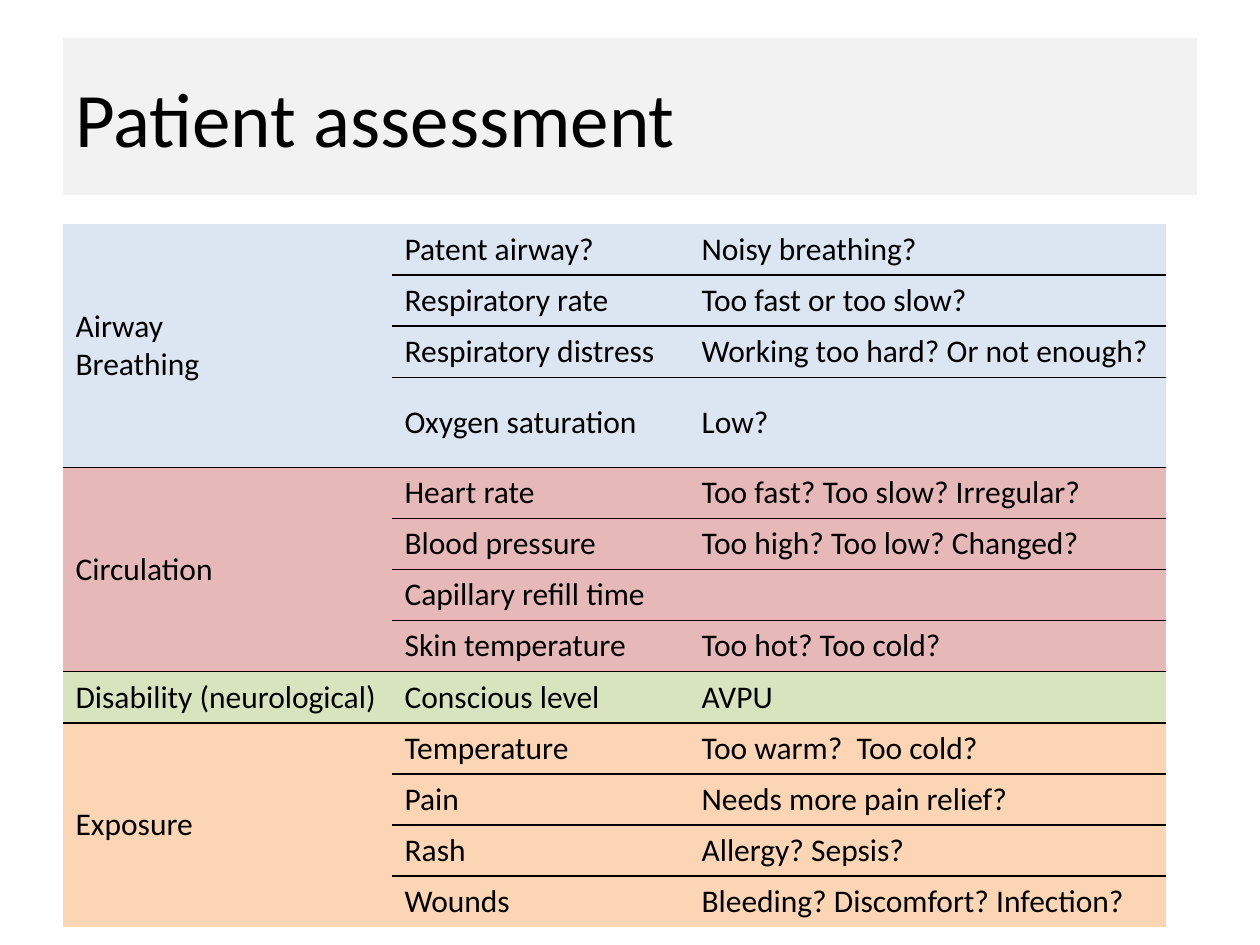
import pptx
import pptx.dml.color
import pptx.enum.shapes
import pptx.enum.text
import pptx.oxml.ns
import pptx.util
from lxml import etree

PX = 914400 / 126
FONT = "Calibri"
BLACK = "000000"
COLUMN_WIDTHS = [329, 297, 477]
ROW_HEIGHT = 51
TALL_ROW = "Oxygen saturation"
TALL_ROW_HEIGHT = 90
GROUPS = [
    (["Airway", "Breathing"], "DCE6F2", [
        ("Patent airway?", "Noisy breathing?"),
        ("Respiratory rate", "Too fast or too slow?"),
        ("Respiratory distress", "Working too hard? Or not enough?"),
        ("Oxygen saturation", "Low?"),
    ]),
    (["Circulation"], "E6B9B8", [
        ("Heart rate", "Too fast? Too slow? Irregular?"),
        ("Blood pressure", "Too high? Too low? Changed?"),
        ("Capillary refill time", ""),
        ("Skin temperature", "Too hot? Too cold?"),
    ]),
    (["Disability (neurological)"], "D7E4BD", [
        ("Conscious level", "AVPU"),
    ]),
    (["Exposure"], "FCD5B5", [
        ("Temperature", "Too warm?  Too cold?"),
        ("Pain", "Needs more pain relief?"),
        ("Rash", "Allergy? Sepsis?"),
        ("Wounds", "Bleeding? Discomfort? Infection?"),
    ]),
]


def px(length):
    """Turn a length in px into EMU."""
    return pptx.util.Emu(round(length * PX))


def color(value):
    """Turn a hex string into a colour."""
    return pptx.dml.color.RGBColor.from_string(value)


def write_lines(frame, lines, size):
    """Write each line as a left-aligned paragraph with one run."""
    for index, line in enumerate(lines):
        para = frame.add_paragraph() if index else frame.paragraphs[0]
        para.alignment = pptx.enum.text.PP_ALIGN.LEFT
        para.font.size = pptx.util.Pt(size)
        if line:
            span = para.add_run()
            span.text = line
            span.font.name = FONT
            span.font.size = pptx.util.Pt(size)
            span.font.color.rgb = color(BLACK)


def set_borders(cell, ruled_sides):
    """Rule the given sides of a cell in black and clear the others."""
    properties = cell._tc.get_or_add_tcPr()
    for side in "LRTB":
        line = etree.SubElement(properties, pptx.oxml.ns.qn(f"a:ln{side}"), w="12700")
        if side in ruled_sides:
            fill = etree.SubElement(line, pptx.oxml.ns.qn("a:solidFill"))
            etree.SubElement(fill, pptx.oxml.ns.qn("a:srgbClr"), val=BLACK)
        else:
            etree.SubElement(line, pptx.oxml.ns.qn("a:noFill"))


def style_cell(cell, fill, ruled_sides):
    """Give a cell its borders, fill and vertical centring."""
    set_borders(cell, ruled_sides)
    cell.fill.solid()
    cell.fill.fore_color.rgb = color(fill)
    cell.vertical_anchor = pptx.enum.text.MSO_ANCHOR.MIDDLE


def add_title(page, left, top, width, height):
    """Place the title band."""
    box = page.shapes.add_shape(
        pptx.enum.shapes.MSO_SHAPE.RECTANGLE, px(left), px(top), px(width), px(height))
    box.shadow.inherit = False
    box.fill.solid()
    box.fill.fore_color.rgb = color("F2F2F2")
    box.line.fill.background()
    box.text_frame.word_wrap = True
    box.text_frame.vertical_anchor = pptx.enum.text.MSO_ANCHOR.MIDDLE
    write_lines(box.text_frame, ["Patient assessment"], 44)


def add_assessment_table(page, left, top):
    """Place the assessment table with one merged label per group."""
    checks = [check for _, _, group in GROUPS for check in group]
    heights = [TALL_ROW_HEIGHT if sign == TALL_ROW else ROW_HEIGHT for sign, _ in checks]
    table = page.shapes.add_table(
        len(checks), len(COLUMN_WIDTHS), px(left), px(top),
        px(sum(COLUMN_WIDTHS)), px(sum(heights))).table
    table.first_row = False
    table.horz_banding = False
    for column, width in zip(table.columns, COLUMN_WIDTHS):
        column.width = px(width)
    for row, height in zip(table.rows, heights):
        row.height = px(height)
    first = 0
    for label, fill, group in GROUPS:
        last = first + len(group) - 1
        for index, check in enumerate(group, first):
            for column in range(len(COLUMN_WIDTHS)):
                top_ruled = index > 0 and (column > 0 or index == first)
                bottom_ruled = index < len(checks) - 1 and (column > 0 or index == last)
                sides = "T" * top_ruled + "B" * bottom_ruled
                if column == 0 and index == first and last < len(checks) - 1:
                    sides += "B"
                style_cell(table.cell(index, column), fill, sides)
            for column, text in enumerate(check, 1):
                write_lines(table.cell(index, column).text_frame, [text], 18)
        if last > first:
            table.cell(first, 0).merge(table.cell(last, 0))
        write_lines(table.cell(first, 0).text_frame, label, 18)
        first = last + 1


def main():
    """Build the slide and save it."""
    deck = pptx.Presentation()
    deck.slide_width, deck.slide_height = px(1260), px(945)
    page = deck.slides.add_slide(deck.slide_layouts[6])
    add_title(page, 63, 38, 1134, 157)
    add_assessment_table(page, 63, 224)
    deck.save("out.pptx")


if __name__ == "__main__":
    main()
